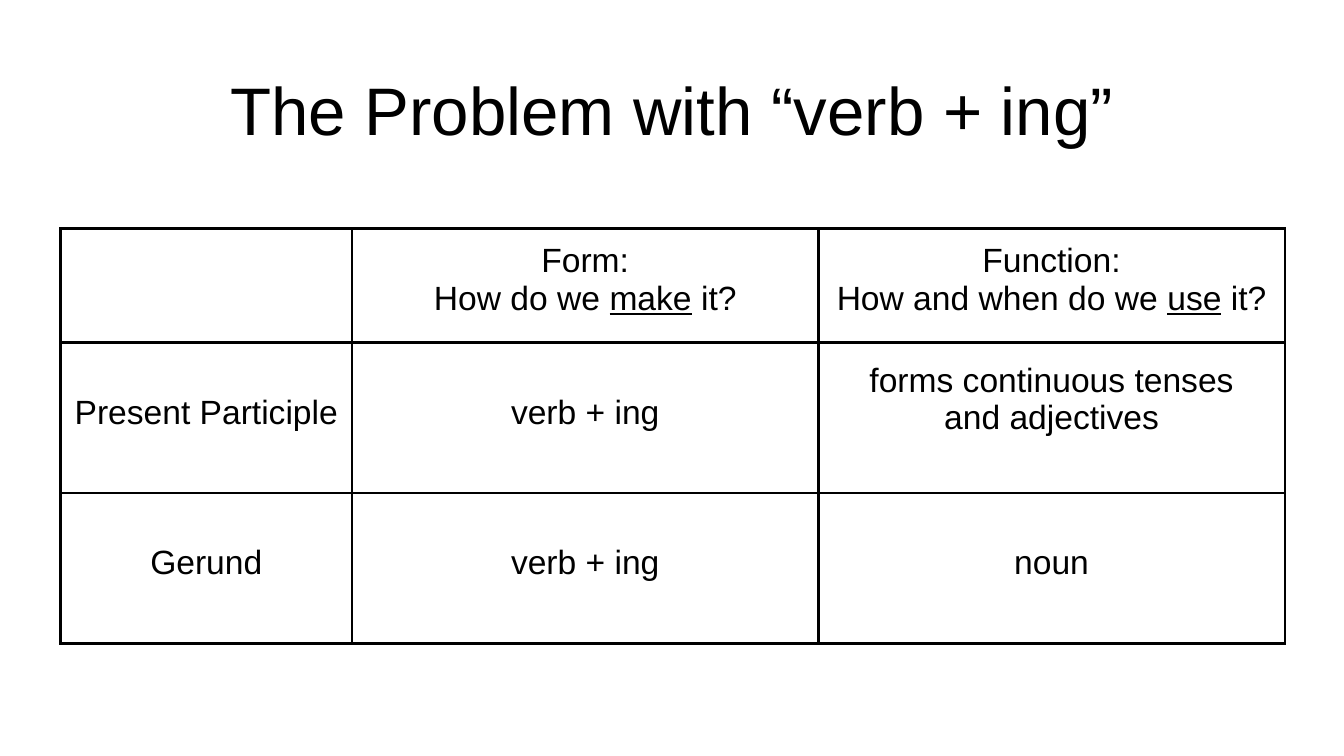
from dataclasses import dataclass

from lxml.etree import SubElement
from pptx import Presentation
from pptx.dml.color import RGBColor
from pptx.enum.text import MSO_ANCHOR as Anchor, PP_ALIGN as Align
from pptx.oxml.ns import qn
from pptx.util import Inches, Pt

BLACK = RGBColor(0, 0, 0)
WHITE = RGBColor(255, 255, 255)
SLIDE_WIDTH = 10
SLIDE_HEIGHT = SLIDE_WIDTH * 9 / 16
COL_WIDTHS = (2.17, 3.47, 3.47)
ROW_HEIGHTS = (0.85, 1.12, 1.12)
INSET = 0.1
LOWERED = 0.38  # top inset of one-line cells, one text line lower


@dataclass(frozen=True)
class CellText:
    """Lines of runs; runs alternate between plain and underlined."""
    lines: tuple[tuple[str, ...], ...] = ()
    top: float = INSET
    first_spacing: float = 1.0


def one_line(text: str) -> CellText:
    return CellText(((text,),), top=LOWERED)


ROWS = (
    (
        CellText(),
        CellText((("Form:",), ("How do we ", "make", " it?"))),
        CellText((("Function:",), ("How and when do we ", "use", " it?"))),
    ),
    (
        one_line("Present Participle"),
        one_line("verb + ing"),
        CellText((("forms continuous tenses",), ("and adjectives",)), first_spacing=1.15),
    ),
    (one_line("Gerund"), one_line("verb + ing"), one_line("noun")),
)


def set_insets(target, top: float = INSET) -> None:
    insets = {"margin_left": INSET, "margin_right": INSET,
              "margin_top": top, "margin_bottom": INSET}
    for name, value in insets.items():
        setattr(target, name, Inches(value))


def write_line(p, runs: tuple[str, ...], size: float) -> None:
    p.alignment = Align.CENTER
    for i, text in enumerate(runs):
        r = p.add_run()
        r.text = text
        font_format = {"name": "Arial", "size": Pt(size), "underline": i % 2 == 1}
        for name, value in font_format.items():
            setattr(r.font, name, value)
        r.font.color.rgb = BLACK


def add_borders(cell, width: float = 1.5) -> None:
    tc_pr = cell._tc.get_or_add_tcPr()
    for i, side in enumerate(("a:lnL", "a:lnR", "a:lnT", "a:lnB")):
        ln = SubElement(tc_pr, qn(side), w=str(Pt(width)))
        fill = SubElement(ln, qn("a:solidFill"))
        SubElement(fill, qn("a:srgbClr"), val=str(BLACK))
        tc_pr.insert(i, ln)  # borders come before the cell fill


def fill_cell(cell, content: CellText) -> None:
    set_insets(cell, content.top)
    cell.vertical_anchor = Anchor.TOP
    cell.fill.background()
    add_borders(cell)
    tf = cell.text_frame
    for i, runs in enumerate(content.lines):
        p = tf.add_paragraph() if i else tf.paragraphs[0]
        p.line_spacing = 1.0 if i else content.first_spacing
        write_line(p, runs, 18)


def add_title(s, text: str) -> None:
    tf = s.shapes.add_textbox(Inches(0.34), Inches(0.35), Inches(9.32), Inches(0.92)).text_frame
    tf.word_wrap = True
    tf.vertical_anchor = Anchor.MIDDLE
    set_insets(tf)
    write_line(tf.paragraphs[0], (text,), 36)


def add_verb_table(s) -> None:
    table = s.shapes.add_table(
        len(ROWS), len(COL_WIDTHS), Inches(0.45), Inches(1.7),
        Inches(sum(COL_WIDTHS)), Inches(sum(ROW_HEIGHTS))).table
    table.first_row = table.horz_banding = False
    for column, width in zip(table.columns, COL_WIDTHS):
        column.width = Inches(width)
    for row, height, contents in zip(table.rows, ROW_HEIGHTS, ROWS):
        row.height = Inches(height)
        for cell, content in zip(row.cells, contents):
            fill_cell(cell, content)


def main() -> None:
    prs = Presentation()
    prs.slide_width, prs.slide_height = Inches(SLIDE_WIDTH), Inches(SLIDE_HEIGHT)
    s = prs.slides.add_slide(prs.slide_layouts[6])
    s.background.fill.solid()
    s.background.fill.fore_color.rgb = WHITE
    add_title(s, "The Problem with “verb + ing”")
    add_verb_table(s)
    prs.save("out.pptx")


if __name__ == "__main__":
    main()
